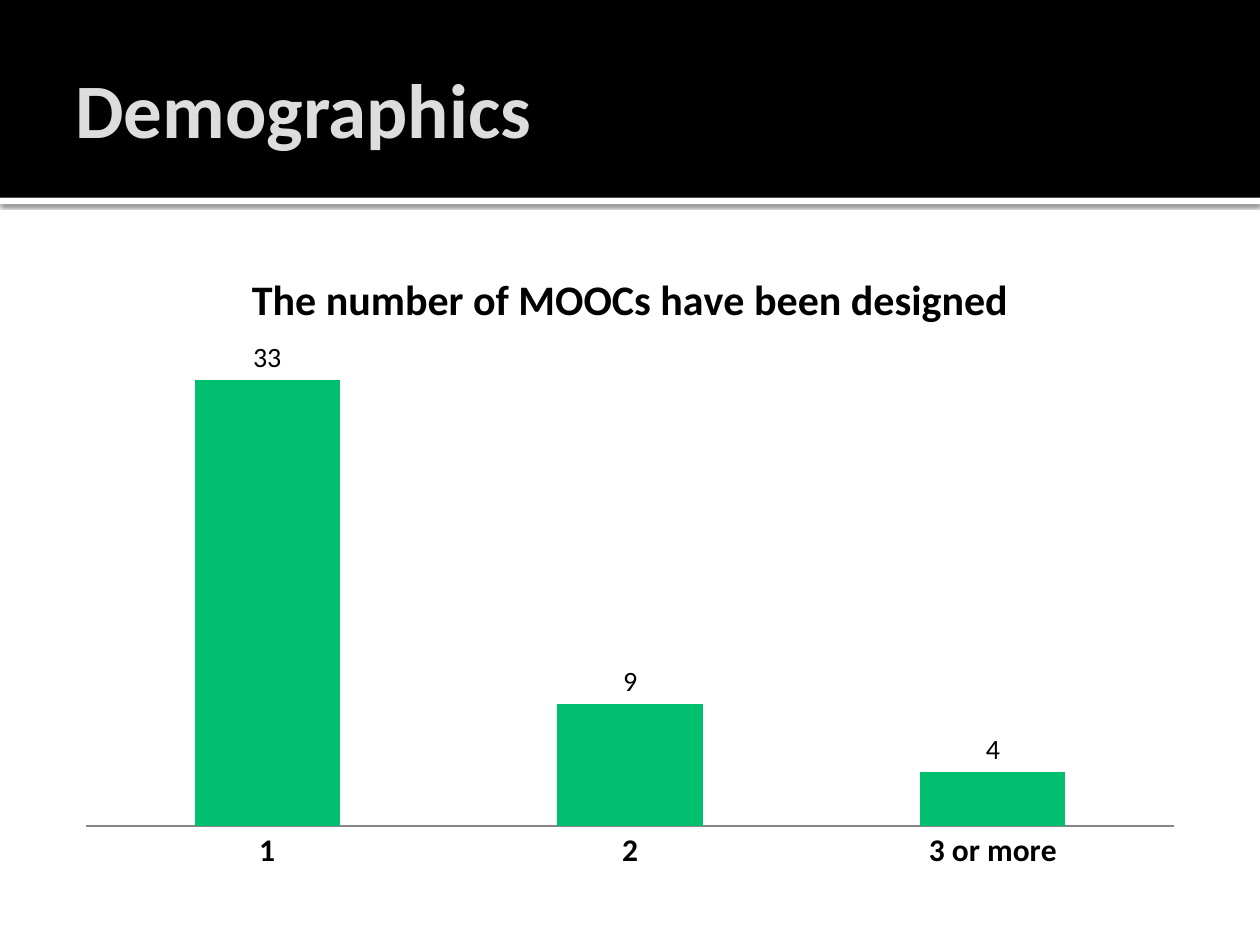
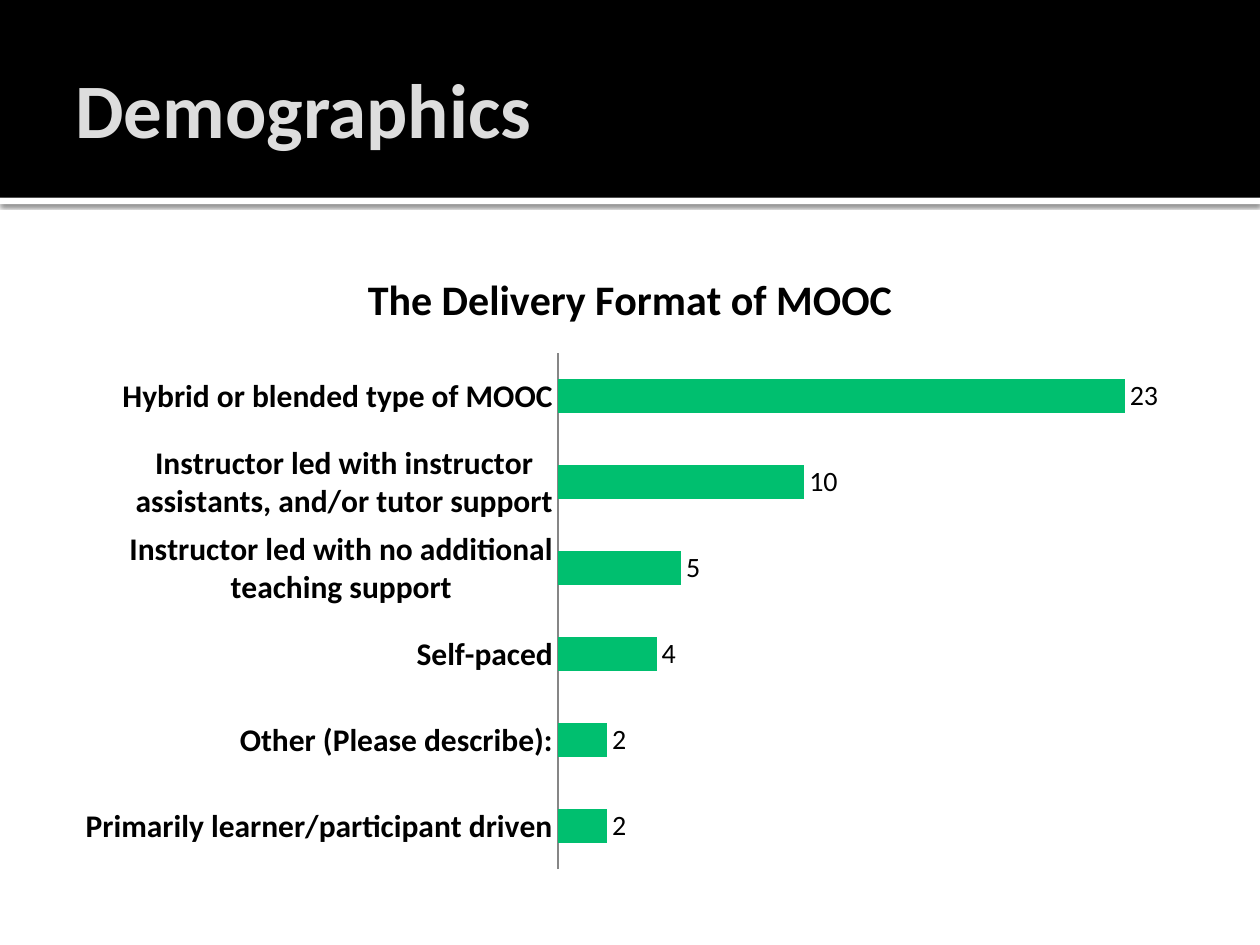
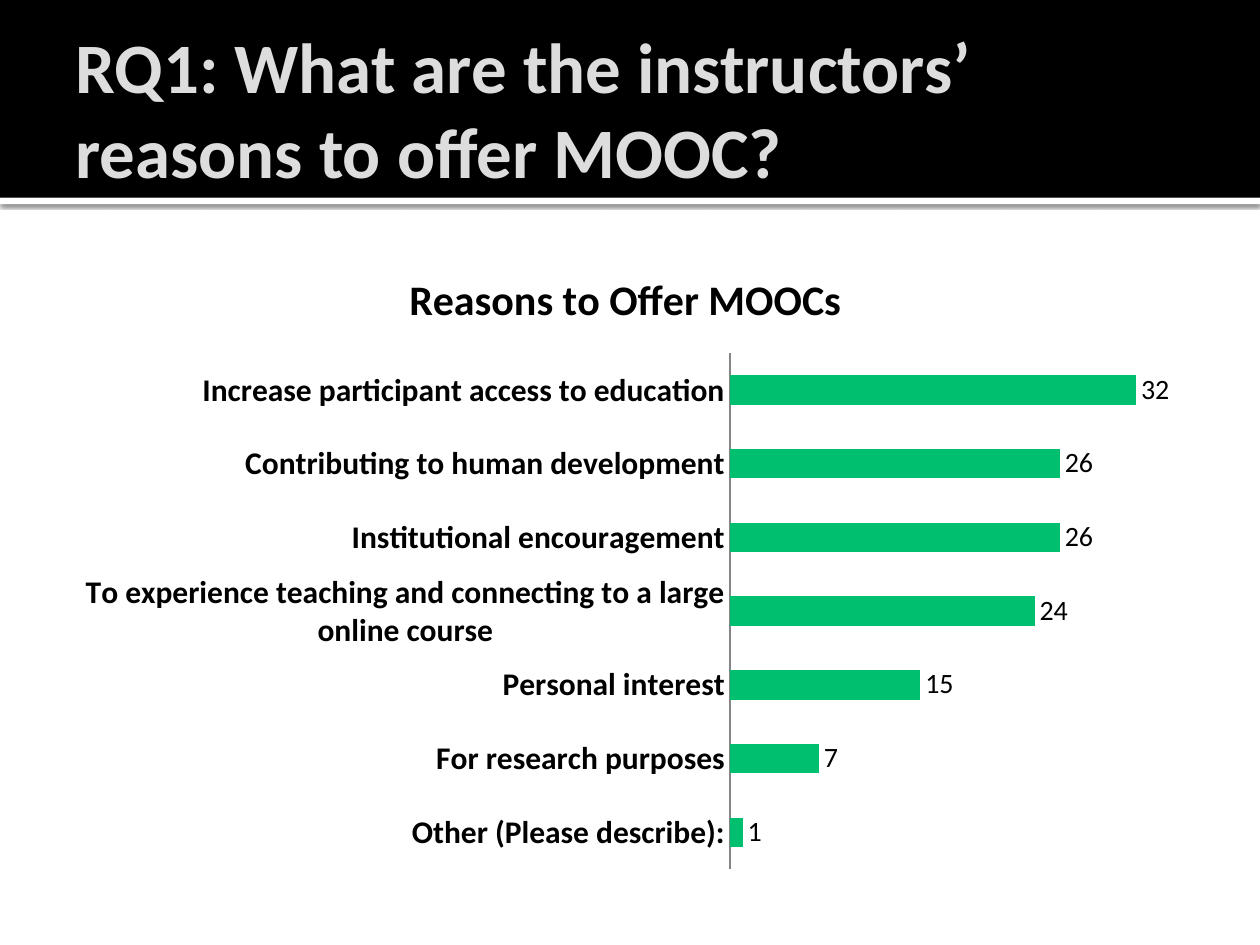
import pptx
import pptx.util
import pptx.chart.data
import pptx.dml.color
import pptx.enum.chart
import pptx.enum.shapes
import pptx.enum.text
import pptx.oxml
import pptx.oxml.ns

Inches, Pt = pptx.util.Inches, pptx.util.Pt
KINDS = pptx.enum.chart.XL_CHART_TYPE
FONT = "Calibri"
COLORS = {"band": "000000", "strip": "FFFFFF", "title": "DDDDDD",
          "text": "000000", "bar": "00BF6F", "axis": "868686"}
WIDTH, HEIGHT = 10, 7.5
BAND = (0, 0, WIDTH, 1.57)
STRIP = (0, 1.57, WIDTH, 0.05)
HEAD = (0.5, 0.17, 9, 1.37)
BODY = (0.5, 1.94, 9, 5.06)


def color(name):
    return pptx.dml.color.RGBColor.from_string(COLORS[name])


def style(font, size, bold=False, tint="text"):
    font.name, font.size, font.bold = FONT, Pt(size), bold
    font.color.rgb = color(tint)


def write(frame, text, **look):
    """Put text in a frame, with size, bold and tint as its format."""
    run = frame.paragraphs[0].add_run()
    run.text = text
    style(run.font, **look)


def add_rect(slide, box, tint):
    kind = pptx.enum.shapes.MSO_SHAPE.RECTANGLE
    shape = slide.shapes.add_shape(kind, *map(Inches, box))
    shape.shadow.inherit = False
    shape.fill.solid()
    shape.fill.fore_color.rgb = color(tint)
    shape.line.fill.background()
    return shape


def add_shade(shape):
    """Cast a soft shadow straight down."""
    effects = shape.element.spPr.find(pptx.oxml.ns.qn("a:effectLst"))
    effects.append(pptx.oxml.parse_xml(
        f'<a:outerShdw {pptx.oxml.ns.nsdecls("a")} blurRad="{Pt(2.5)}" '
        f'dist="{Pt(0.8)}" dir="5400000" algn="tl" rotWithShape="0">'
        '<a:srgbClr val="000000"><a:alpha val="60000"/></a:srgbClr>'
        '</a:outerShdw>'))


def add_head(slide, box, text, size):
    add_shade(add_rect(slide, STRIP, "strip"))
    add_rect(slide, BAND, "band")
    frame = slide.shapes.add_textbox(*map(Inches, box)).text_frame
    frame.word_wrap = True
    frame.vertical_anchor = pptx.enum.text.MSO_ANCHOR.MIDDLE
    frame.margin_left = Inches(0.1)
    frame.margin_right = Inches(0.05)
    write(frame, text, size=size, bold=True, tint="title")


def add_graph(slide, box, kind, title, top, rows):
    data = pptx.chart.data.CategoryChartData()
    data.categories = [name for name, count in rows]
    data.add_series("Series 1", [count for name, count in rows])
    chart = slide.shapes.add_chart(kind, *map(Inches, box), data).chart
    style(chart.font, 10)
    chart.has_legend = False
    chart.has_title = True
    write(chart.chart_title.text_frame, title, size=24, bold=True)
    chart.chart_title.include_in_layout = False

    names, scale = chart.category_axis, chart.value_axis
    style(names.tick_labels.font, 18, bold=True)
    names.major_tick_mark = pptx.enum.chart.XL_TICK_MARK.NONE
    names.has_major_gridlines = False
    names.format.line.color.rgb = color("axis")
    names.format.line.width = Pt(0.75)
    scale.visible = False
    scale.has_major_gridlines = False
    scale.minimum_scale, scale.maximum_scale = 0, top

    plot = chart.plots[0]
    plot.gap_width = 150
    if kind == KINDS.COLUMN_CLUSTERED:
        plot.overlap = -25
    plot.vary_by_categories = False
    fill = plot.series[0].format.fill
    fill.solid()
    fill.fore_color.rgb = color("bar")
    plot.has_data_labels = True
    labels = plot.data_labels
    labels.show_value = True
    labels.position = pptx.enum.chart.XL_LABEL_POSITION.OUTSIDE_END
    style(labels.font, 16)


SLIDES = [
    ("Demographics", 44, KINDS.COLUMN_CLUSTERED,
     "The number of MOOCs have been designed", 35,
     [("1", 33), ("2", 9), ("3 or more", 4)]),
    ("Demographics", 44, KINDS.BAR_CLUSTERED,
     "The Delivery Format of MOOC", 25,
     [("Primarily learner/participant driven", 2),
      ("Other (Please describe):", 2),
      ("Self-paced", 4),
      ("Instructor led with no additional teaching support", 5),
      ("Instructor led with instructor assistants, and/or tutor support", 10),
      ("Hybrid or blended type of MOOC", 23)]),
    ("RQ1: What are the instructors’ reasons to offer MOOC?", 40.5,
     KINDS.BAR_CLUSTERED, "Reasons to Offer MOOCs ", 35,
     [("Other (Please describe):", 1),
      ("For research purposes", 7),
      ("Personal interest", 15),
      ("To experience teaching and connecting to a large online course", 24),
      ("Institutional encouragement", 26),
      ("Contributing to human development", 26),
      ("Increase participant access to education", 32)]),
]


def main():
    deck = pptx.Presentation()
    deck.slide_width, deck.slide_height = Inches(WIDTH), Inches(HEIGHT)
    for head, size, *graph in SLIDES:
        slide = deck.slides.add_slide(deck.slide_layouts[6])
        add_head(slide, HEAD, head, size)
        add_graph(slide, BODY, *graph)
    deck.save("out.pptx")


if __name__ == "__main__":
    main()
